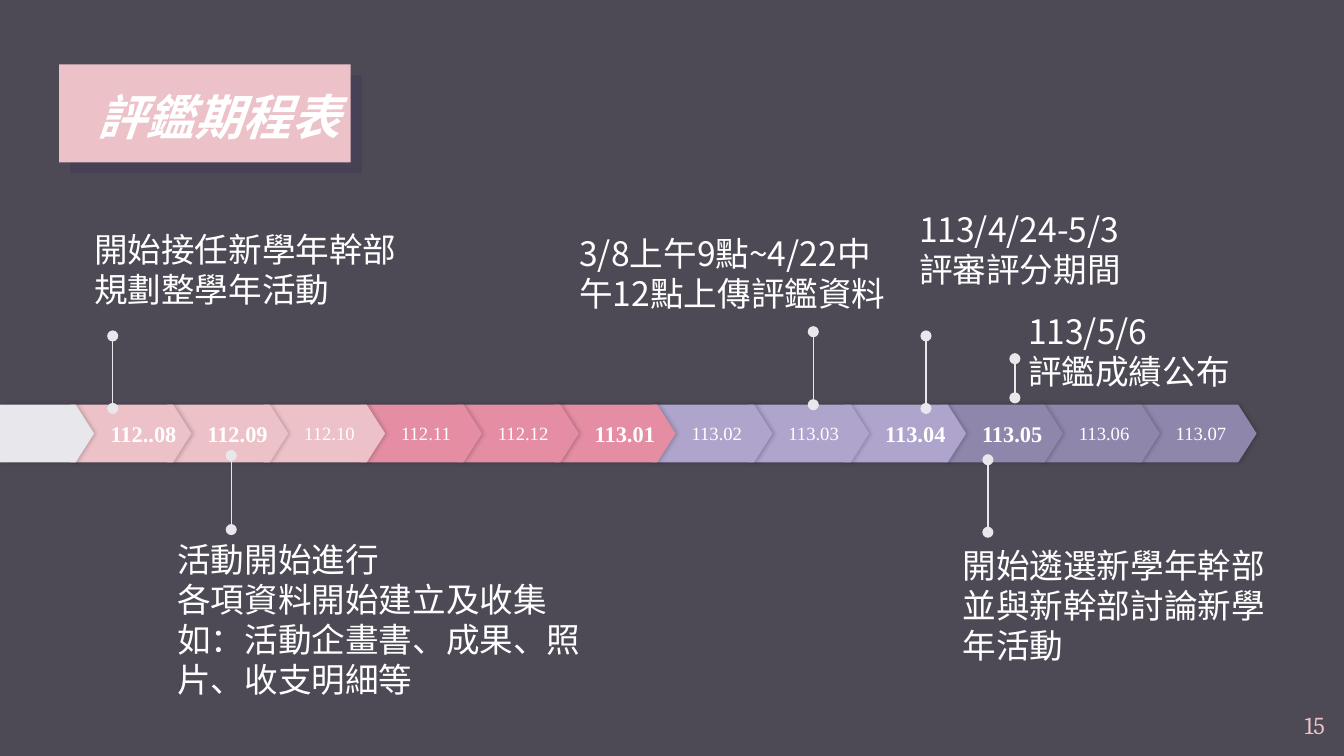
from lxml import etree
from pptx import Presentation
from pptx.dml.color import RGBColor
from pptx.enum.shapes import MSO_CONNECTOR, MSO_SHAPE
from pptx.enum.text import MSO_ANCHOR, MSO_AUTO_SIZE, PP_ALIGN
from pptx.oxml.ns import qn
from pptx.util import Cm, Pt

RECT, PENTAGON = MSO_SHAPE.RECTANGLE, MSO_SHAPE.PENTAGON
STRAIGHT = MSO_CONNECTOR.STRAIGHT
LEFT, RIGHT = PP_ALIGN.LEFT, PP_ALIGN.RIGHT
TOP, MIDDLE, BOTTOM = MSO_ANCHOR.TOP, MSO_ANCHOR.MIDDLE, MSO_ANCHOR.BOTTOM
NO_FIT = MSO_AUTO_SIZE.NONE

SANS, SERIF, NUMBER = "Noto Sans CJK SC", "Times New Roman", "Cambria"
WHITE, PALE, PINK, NIGHT = "FFFFFF", "E7E7EC", "ECC1C8", "4D4A56"
QUARTERS = [PINK, "E48DA3", "AEA4CC", "8F86AC"]
MONTHS = ["112..08", "112.09", "112.10", "112.11", "112.12", "113.01",
          "113.02", "113.03", "113.04", "113.05", "113.06", "113.07"]
MILESTONES = {"112..08", "112.09", "113.01", "113.04", "113.05"}
BAND_TOP, BAND_HEIGHT = 7.65, 1.09
FIRST, PITCH, MONTH_WIDTH = 1.33, 1.83, 2.29

PINS = [(2.13, 7.72, 6.35), (17.5, 7.72, 6.35), (15.37, 7.65, 6.27),
        (18.67, 10.06, 8.69), (4.37, 10.01, 8.61), (19.18, 7.52, 6.78)]
NOTES = [
    ((1.78, 3.61, 5.75, 2.24), ["開始接任新學年幹部\v規劃整學年活動"]),
    ((3.35, 10.39, 7.8, 2.82),
     ["活動開始進行", "各項資料開始建立及收集\v如：活動企畫書、成果、照片、收支明細等"]),
    ((18.19, 10.39, 5.94, 2.18), ["開始遴選新學年幹部", "並與新幹部討論新學年活動"]),
    ((17.37, 3.96, 5.46, 1.5), ["113/4/24-5/3\v評審評分期間"]),
    ((10.95, 4.42, 5.79, 1.5), ["3/8上午9點~4/22中午12點上傳評鑑資料"]),
    ((19.43, 5.89, 5.46, 1.5), ["113/5/6\v評鑑成績公布"]),
]


def rgb(value):
    """Return the colour for a hex string."""
    return RGBColor.from_string(value)


class Timeline:
    """Hold the style and the slide, and draw each kind of element."""

    def __init__(self, prs):
        """Add a title-only slide with a dark background."""
        self.s = prs.slides.add_slide(prs.slide_layouts[5])
        self.s.background.fill.solid()
        self.s.background.fill.fore_color.rgb = rgb(NIGHT)

    def set_text(self, sp, paragraphs, size, font, color=WHITE, bold=False, italic=False,
                 align=LEFT, anchor=MIDDLE, margins=(0, 0, 0, 0), spacing=None):
        """Fill a shape with uniformly styled paragraphs."""
        tf = sp.text_frame
        tf.word_wrap, tf.auto_size, tf.vertical_anchor = True, NO_FIT, anchor
        tf.margin_left, tf.margin_top, tf.margin_right, tf.margin_bottom = map(Cm, margins)
        for i, text in enumerate(paragraphs):
            p = tf.add_paragraph() if i else tf.paragraphs[0]
            p.text, p.alignment = text, align
            if spacing:
                p.line_spacing = Pt(spacing)
            p.font.size, p.font.name = Pt(size), font
            p.font.bold, p.font.italic = bold, italic
            p.font.color.rgb = rgb(color)
            style = p._p.pPr.find(qn("a:defRPr"))
            etree.SubElement(style, qn("a:ea"), typeface=font)

    def block(self, preset, box, fill, shadow):
        """Add a borderless shape with an outer shadow."""
        sp = self.s.shapes.add_shape(preset, *map(Cm, box))
        sp.fill.solid()
        sp.fill.fore_color.rgb = rgb(fill)
        sp.line.fill.background()
        sp.shadow.inherit = False
        color, alpha, blur, dist, angle = shadow
        outer = etree.SubElement(
            sp.element.spPr.find(qn("a:effectLst")), qn("a:outerShdw"),
            blurRad=str(Pt(blur)), dist=str(Pt(dist)), dir=str(angle * 60000),
            algn="bl", rotWithShape="0")
        tint = etree.SubElement(outer, qn("a:srgbClr"), val=color)
        etree.SubElement(tint, qn("a:alpha"), val=str(alpha * 1000))
        return sp

    def title(self, text):
        """Place the title on its pink panel."""
        panel = self.block(RECT, (1.12, 1.22, 5.51, 1.85), PINK, ("20124D", 15, 0, 8.2, 45))
        sp = self.s.shapes.title
        panel.element.addnext(sp.element)
        sp.left, sp.top, sp.width, sp.height = map(Cm, (1.35, 1.27, 5.08, 1.85))
        self.set_text(sp, [text], 26, SANS, bold=True, italic=True, align=RIGHT)

    def arrow(self, left, width, fill):
        """Add one arrow of the month band."""
        sp = self.block(PENTAGON, (left, BAND_TOP, width, BAND_HEIGHT), fill,
                        ("000000", 20, 2.2, 0.8, 0))
        sp.adjustments[0] = 0.32
        return sp

    def month(self, index, label):
        """Add a labelled month, larger and bold for a milestone."""
        sp = self.arrow(FIRST + PITCH * index, MONTH_WIDTH, QUARTERS[index // 3])
        bold = label in MILESTONES
        self.set_text(sp, [label], 12 if bold else 10, SERIF, bold=bold,
                      margins=(0.76, 0, 0, 0))

    def pin(self, x, start, end):
        """Add a vertical line with a dot at both ends."""
        c = self.s.shapes.add_connector(STRAIGHT, Cm(x), Cm(start), Cm(x), Cm(end))
        c.line.color.rgb = rgb(PALE)
        c.line.width = Pt(0.75)
        for tag in ("a:headEnd", "a:tailEnd"):
            etree.SubElement(c.element.spPr.find(qn("a:ln")), qn(tag), type="oval")
        etree.SubElement(c.element.spPr, qn("a:effectLst"))

    def text(self, box, paragraphs, size, font, **style):
        """Add a text box."""
        sp = self.s.shapes.add_textbox(*map(Cm, box))
        self.set_text(sp, paragraphs, size, font, **style)


def main():
    """Build the evaluation schedule slide."""
    prs = Presentation()
    prs.slide_width, prs.slide_height = Cm(25.4), Cm(14.29)
    t = Timeline(prs)
    t.title("評鑑期程表")
    t.text((23.77, 13.18, 1.52, 1.09), ["15"], 13, NUMBER, color=PINK,
           align=RIGHT, anchor=TOP, margins=(0.25,) * 4)
    for index, label in reversed(list(enumerate(MONTHS))):
        t.month(index, label)
    t.arrow(0, 1.78, PALE)
    for pin in PINS:
        t.pin(*pin)
    for box, paragraphs in NOTES:
        t.text(box, paragraphs, 18, SANS, anchor=BOTTOM, spacing=21.4)
    prs.save("out.pptx")


if __name__ == "__main__":
    main()
